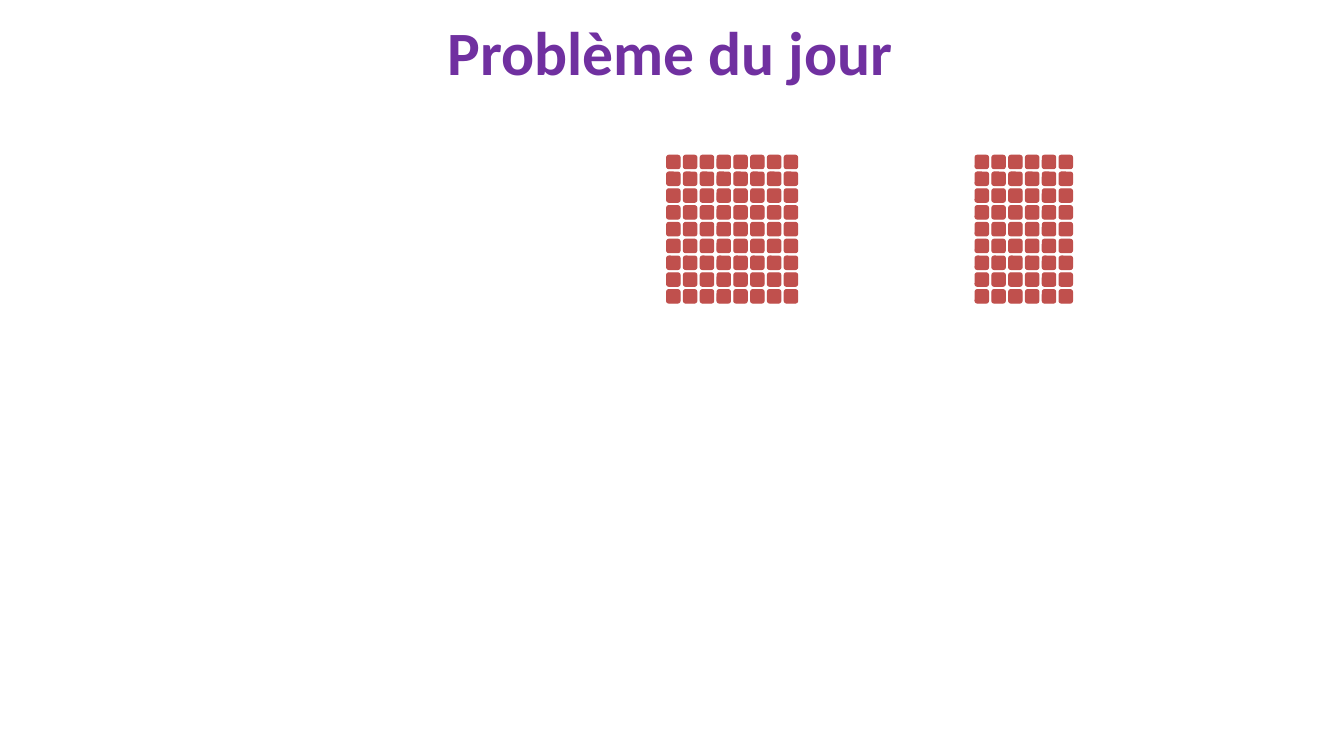
from pptx import Presentation
from pptx.dml.color import RGBColor
from pptx.enum.shapes import MSO_SHAPE
from pptx.enum.text import MSO_ANCHOR, PP_ALIGN
from pptx.util import Emu, Pt

PURPLE = RGBColor(0x70, 0x30, 0xA0)
RED = RGBColor(0xC0, 0x50, 0x4D)
SCALE = 3048
ROWS = 9
SIDE = 40
PITCH = 50


def px(count):
    return Emu(count * SCALE)


class Board:
    font = "Calibri"

    def __init__(self, deck):
        self.slide = deck.slides.add_slide(deck.slide_layouts[5])

    def title(self, text, left, top, width, height):
        shape = self.slide.shapes.title
        shape.left, shape.top = px(left), px(top)
        shape.width, shape.height = px(width), px(height)
        frame = shape.text_frame
        frame.word_wrap = True
        frame.vertical_anchor = MSO_ANCHOR.MIDDLE
        line = frame.paragraphs[0]
        line.alignment = PP_ALIGN.CENTER
        line.line_spacing = 0.9
        run = line.add_run()
        run.text = text
        run.font.name = self.font
        run.font.size = Pt(44)
        run.font.bold = True
        run.font.color.rgb = PURPLE

    def square(self, group, left, top):
        shape = group.shapes.add_shape(
            MSO_SHAPE.ROUNDED_RECTANGLE, px(left), px(top), px(SIDE), px(SIDE))
        shape.shadow.inherit = False
        shape.fill.solid()
        shape.fill.fore_color.rgb = RED
        shape.line.color.rgb = RED
        shape.line.width = Pt(0.75)

    def grid(self, left, top, cols):
        group = self.slide.shapes.add_group_shape()
        for row in range(ROWS):
            for col in range(cols):
                self.square(group, left + col * PITCH, top + row * PITCH)


def main():
    deck = Presentation()
    deck.slide_width, deck.slide_height = px(4000), px(2250)
    board = Board(deck)
    board.title("Problème du jour", 1134, -51, 1722, 435)
    board.grid(1984, 462, 8)
    board.grid(2902, 462, 6)
    deck.save("out.pptx")


if __name__ == "__main__":
    main()
